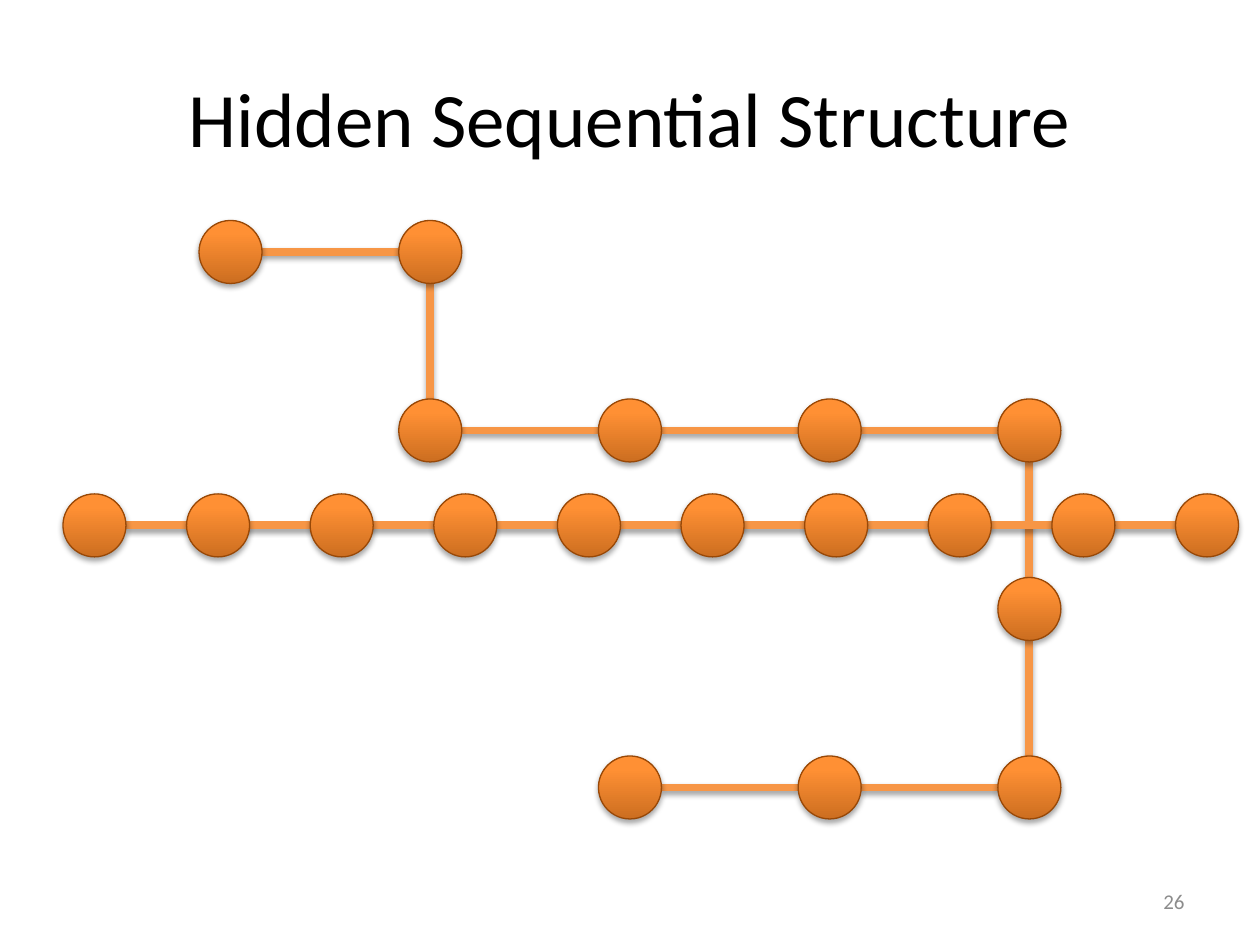
from itertools import pairwise

from lxml import etree
from pptx import Presentation
from pptx.dml.color import RGBColor
from pptx.enum.shapes import MSO_CONNECTOR, MSO_SHAPE
from pptx.enum.text import MSO_ANCHOR, PP_ALIGN
from pptx.oxml import parse_xml
from pptx.oxml.ns import nsdecls
from pptx.util import Inches, Pt

BLACK = RGBColor(0x00, 0x00, 0x00)
GRAY = RGBColor(0x8C, 0x8C, 0x8C)
LINK_ORANGE = RGBColor(0xF7, 0x96, 0x46)
NODE_EDGE = RGBColor(0x98, 0x48, 0x07)
NODE_STOPS = [
    (0, RGBColor(0xCC, 0x6E, 0x20)),
    (80, RGBColor(0xFF, 0x90, 0x34)),
    (100, RGBColor(0xFF, 0x91, 0x36)),
]

RADIUS = 0.25

# Folded chain: (column, row) of each node in order, on a 5 by 4 grid
FOLDED_CHAIN = [(0, 0), (1, 0), (1, 1), (2, 1), (3, 1),
                (4, 1), (4, 2), (4, 3), (3, 3), (2, 3)]
GRID_LEFT, GRID_RIGHT = 1.83, 8.17
GRID_TOP, GRID_BOTTOM = 2, 6.25

# Straight chain: the same nodes laid out in one row
ROW_LEFT, ROW_RIGHT, ROW_Y = 0.75, 9.58, 4.17


def add_shadow(shape):
    shape._element.spPr.append(parse_xml(
        f'<a:effectLst {nsdecls("a")}>'
        '<a:outerShdw blurRad="40000" dist="23000" dir="5400000" rotWithShape="0">'
        '<a:srgbClr val="000000"><a:alpha val="35000"/></a:srgbClr>'
        '</a:outerShdw></a:effectLst>'))


def add_gradient(shape):
    gradient = parse_xml(
        f'<a:gradFill {nsdecls("a")} rotWithShape="1"><a:gsLst/>'
        '<a:lin ang="16200000" scaled="0"/></a:gradFill>')
    for position, color in NODE_STOPS:
        stop = etree.SubElement(gradient[0], gradient[0].tag.replace("gsLst", "gs"),
                                pos=str(position * 1000))
        stop.append(parse_xml(f'<a:srgbClr {nsdecls("a")} val="{color}"/>'))
    shape._element.spPr.find("{*}prstGeom").addnext(gradient)


def add_node(shapes, center):
    x, y = center
    node = shapes.add_shape(MSO_SHAPE.OVAL, Inches(x - RADIUS), Inches(y - RADIUS),
                            Inches(2 * RADIUS), Inches(2 * RADIUS))
    node.line.color.rgb = NODE_EDGE
    node.line.width = Pt(0.75)
    add_gradient(node)
    add_shadow(node)


def add_link(shapes, start, end):
    """Join the facing edges of two nodes that share a row or a column."""
    (x1, y1), (x2, y2) = start, end
    dx = RADIUS * ((x2 > x1) - (x2 < x1))
    dy = RADIUS * ((y2 > y1) - (y2 < y1))
    link = shapes.add_connector(MSO_CONNECTOR.STRAIGHT, Inches(x1 + dx), Inches(y1 + dy),
                                Inches(x2 - dx), Inches(y2 - dy))
    link.line.color.rgb = LINK_ORANGE
    link.line.width = Pt(4.5)
    add_shadow(link)


def add_text(shapes, text, left, top, width, height, size, color, align):
    frame = shapes.add_textbox(Inches(left), Inches(top),
                               Inches(width), Inches(height)).text_frame
    frame.word_wrap = True
    frame.vertical_anchor = MSO_ANCHOR.MIDDLE
    paragraph = frame.paragraphs[0]
    paragraph.text = text
    paragraph.alignment = align
    paragraph.font.name = "Calibri"
    paragraph.font.size = Pt(size)
    paragraph.font.color.rgb = color


def add_folded_chain(shapes):
    column_step = (GRID_RIGHT - GRID_LEFT) / 4
    row_step = (GRID_BOTTOM - GRID_TOP) / 3
    centers = [(GRID_LEFT + column * column_step, GRID_TOP + row * row_step)
               for column, row in FOLDED_CHAIN]
    for start, end in pairwise(centers):
        add_link(shapes, start, end)
    for center in centers:
        add_node(shapes, center)


def add_straight_chain(shapes):
    row = shapes.add_group_shape().shapes
    step = (ROW_RIGHT - ROW_LEFT) / (len(FOLDED_CHAIN) - 1)
    add_link(row, (ROW_LEFT, ROW_Y), (ROW_RIGHT, ROW_Y))
    for index in range(len(FOLDED_CHAIN)):
        add_node(row, (ROW_LEFT + index * step, ROW_Y))


def main():
    prs = Presentation()
    prs.slide_width, prs.slide_height = Inches(10), Inches(7.5)
    shapes = prs.slides.add_slide(prs.slide_layouts[6]).shapes

    # Title
    add_text(shapes, "Hidden Sequential Structure", 0.5, 0.3, 9, 1.25,
             44, BLACK, PP_ALIGN.CENTER)

    # Chains, the straight one in front
    add_folded_chain(shapes)
    add_straight_chain(shapes)

    # Slide number
    add_text(shapes, "26", 7.17, 6.95, 2.33, 0.4, 12, GRAY, PP_ALIGN.RIGHT)

    prs.save("out.pptx")


if __name__ == "__main__":
    main()
